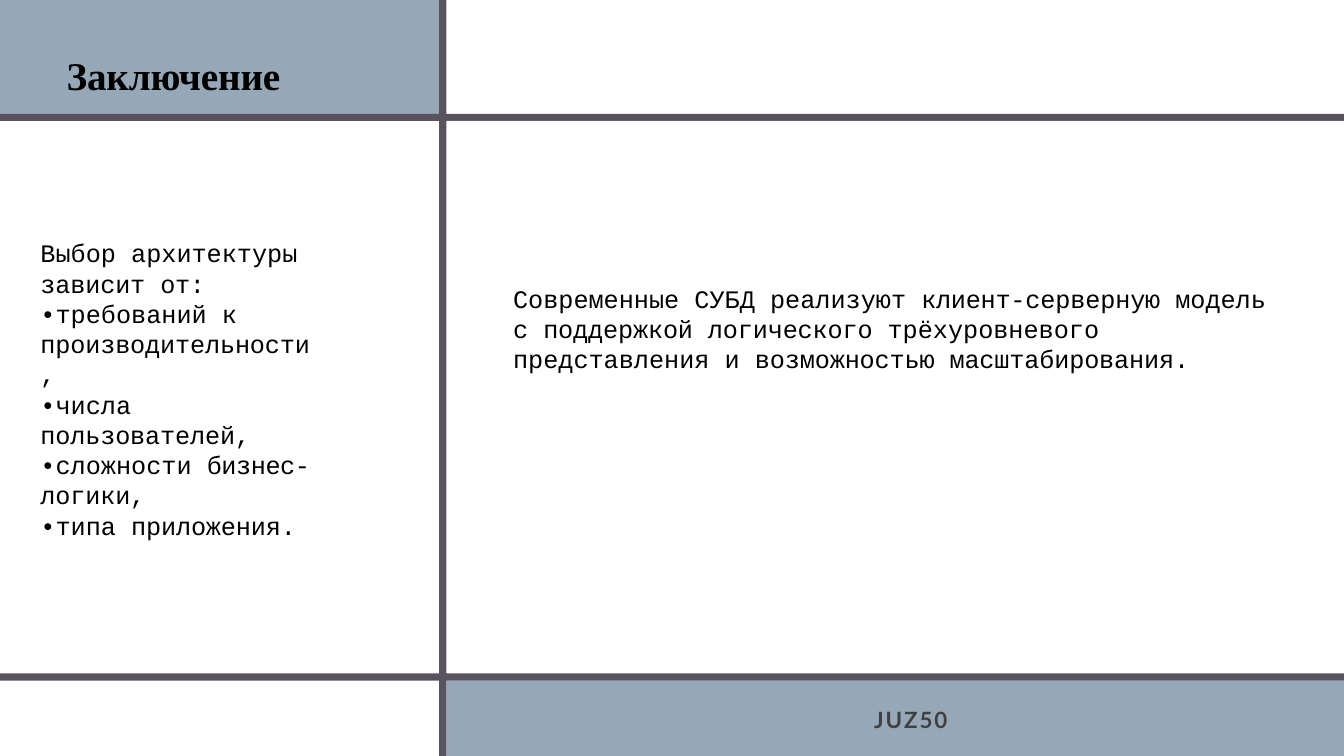
from typing import NamedTuple

from lxml.etree import SubElement
from pptx import Presentation
from pptx.dml.color import RGBColor
from pptx.enum.shapes import MSO_SHAPE
from pptx.oxml.ns import qn
from pptx.shapes.autoshape import Shape
from pptx.slide import Slide
from pptx.util import Cm, Pt

WIDTH, HEIGHT = 33.87, 19.05
BAR = 0.18
COLUMN_LEFT, COLUMN_RIGHT = 11.07, 11.07 + BAR
HEADER_TOP, HEADER_BOTTOM = 2.87, 2.87 + BAR
FOOTER_TOP, FOOTER_BOTTOM = 16.97, 16.97 + BAR
BLUE, GREY, WHITE, BLACK = "96A7B8", "58535F", "FFFFFF", "000000"


class Panel(NamedTuple):
    left: float
    top: float
    right: float
    bottom: float
    color: str
    opacity: int = 100


class Piece(NamedTuple):
    text: str
    spacing: float = 0


Paragraphs = list[list[Piece]]

HEADER_PANELS = [
    Panel(0, 0, COLUMN_LEFT, HEADER_TOP, BLUE),
    Panel(0, HEADER_TOP, WIDTH, HEADER_BOTTOM, GREY),
    Panel(COLUMN_RIGHT, HEADER_BOTTOM, WIDTH, FOOTER_TOP, WHITE, 75),
]
FOOTER_PANELS = [
    Panel(COLUMN_RIGHT, FOOTER_BOTTOM, WIDTH, HEIGHT, BLUE),
    Panel(0, FOOTER_BOTTOM, COLUMN_LEFT, HEIGHT, WHITE, 75),
]
CROSS = [
    (WIDTH, FOOTER_TOP), (COLUMN_RIGHT, FOOTER_TOP), (COLUMN_RIGHT, 0),
    (COLUMN_LEFT, 0), (COLUMN_LEFT, FOOTER_TOP), (0, FOOTER_TOP),
    (0, FOOTER_BOTTOM), (COLUMN_LEFT, FOOTER_BOTTOM), (COLUMN_LEFT, HEIGHT),
    (COLUMN_RIGHT, HEIGHT), (COLUMN_RIGHT, FOOTER_BOTTOM), (WIDTH, FOOTER_BOTTOM),
]

CRITERIA = [
    [Piece("Выбор архитектуры "), Piece("зависит ", -0.1), Piece("от:", -0.2)],
    [Piece("•требований "), Piece("к ", 0.1), Piece("производительности,", -0.1)],
    [Piece("•числа "), Piece("пользователей,", -0.1)],
    [Piece("•сложности "), Piece("бизнес-", -0.3), Piece("логики,", -0.1)],
    [Piece("•типа "), Piece("приложения.", -0.1)],
]
SUMMARY = [[
    Piece("Современные СУБД реализуют "),
    Piece("клиент-", -0.2),
    Piece("серверную ", -0.1),
    Piece("модель с "),
    Piece("поддержкой логического ", -0.1),
    Piece("трёхуровневого представления и "),
    Piece("возможностью масштабирования.", -0.1),
]]


def rgb(color: str) -> RGBColor:
    return RGBColor.from_string(color)


def paint(shape: Shape, color: str, opacity: int = 100) -> None:
    shape.shadow.inherit = False
    shape.line.fill.background()
    shape.fill.solid()
    shape.fill.fore_color.rgb = rgb(color)
    if opacity < 100:
        srgb = shape.fill._xPr.find(qn("a:solidFill"))[0]
        SubElement(srgb, qn("a:alpha"), val=str(opacity * 1000))


def draw_panel(slide: Slide, panel: Panel) -> None:
    rectangle = slide.shapes.add_shape(
        MSO_SHAPE.RECTANGLE, Cm(panel.left), Cm(panel.top),
        Cm(panel.right - panel.left), Cm(panel.bottom - panel.top))
    paint(rectangle, panel.color, panel.opacity)


def draw_cross(slide: Slide) -> None:
    start, *corners = [(Cm(x), Cm(y)) for x, y in CROSS]
    builder = slide.shapes.build_freeform(*start)
    builder.add_line_segments(corners, close=True)
    paint(builder.convert_to_shape(), GREY)


def write(slide: Slide, paragraphs: Paragraphs, *, left: float, top: float,
          width: float, height: float, font: str, size: float,
          color: str = BLACK, bold: bool = False, inset_top: float = 0.1,
          inset_right: float = 0, line_height: float | None = None) -> None:
    box = slide.shapes.add_textbox(Cm(left), Cm(top), Cm(width), Cm(height))
    frame = box.text_frame
    frame.word_wrap = True
    frame.margin_left = Cm(0.03)
    frame.margin_top = Cm(inset_top)
    frame.margin_right = Cm(inset_right)
    frame.margin_bottom = 0
    for index, pieces in enumerate(paragraphs):
        paragraph = frame.add_paragraph() if index else frame.paragraphs[0]
        if line_height:
            paragraph.line_spacing = Pt(line_height)
        for piece in pieces:
            run = paragraph.add_run()
            run.text = piece.text
            run.font.name = font
            run.font.size = Pt(size)
            run.font.bold = bold
            run.font.color.rgb = rgb(color)
            if piece.spacing:
                run.font._element.set("spc", str(round(piece.spacing * 100)))


def main() -> None:
    presentation = Presentation()
    presentation.slide_width = Cm(WIDTH)
    presentation.slide_height = Cm(HEIGHT)
    slide = presentation.slides.add_slide(presentation.slide_layouts[6])

    for panel in HEADER_PANELS + FOOTER_PANELS:
        draw_panel(slide, panel)
    draw_cross(slide)

    write(slide, [[Piece("JUZ50", 1.4)]], left=22, top=17.73, width=2.13,
          height=0.74, font="Lato", size=16, color="404040", bold=True,
          inset_top=0.06)
    write(slide, [[Piece("Заключение", -0.1)]], left=1.65, top=1.19, width=5.6,
          height=1.24, font="Times New Roman", size=28, bold=True)
    write(slide, CRITERIA, left=0.99, top=5.89, width=9.14, height=5.41,
          font="Courier New", size=18, inset_right=2.06, line_height=21.6)
    write(slide, SUMMARY, left=12.9, top=7.04, width=19.28, height=2.34,
          font="Courier New", size=18, line_height=21.6)

    presentation.save("out.pptx")


if __name__ == "__main__":
    main()
